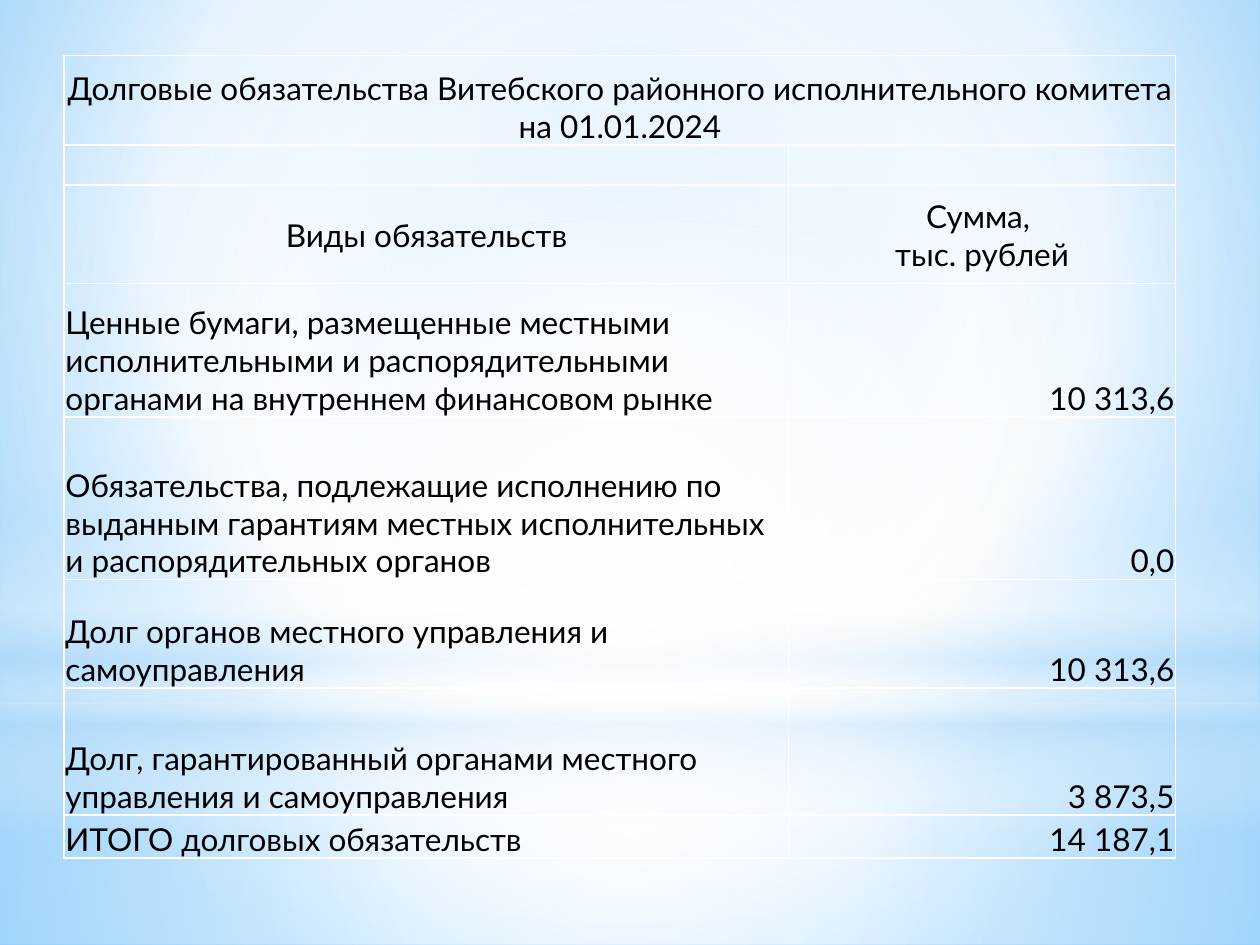
from lxml import etree
from pptx import Presentation, util as u
from pptx.dml.color import RGBColor
from pptx.enum import shapes, text
from pptx.oxml import parse_xml
from pptx.oxml.ns import nsdecls, qn

WIDTH, HEIGHT = 10, 7.5
COLORS = {"sky": "9ED5FF", "deep": "5BB9FF", "mist": "B4DCFA",
          "white": "FFFFFF", "text": "000000"}
CENTER = (50, 50, 50, 50)

# Stops are (position %, color, opacity %); the focus is left, top, right, bottom in %.
BACKGROUND = ([(0, "sky", 100), (60, "white", 100), (100, "deep", 100)], (20, 10, 20, 60))
# Shape, top, height, stops, focus (None for a vertical gradient)
LAYERS = [
    ("RECTANGLE", 5.58, 1.92, [(0, "white", 91), (37, "white", 76), (100, "mist", 79)], CENTER),
    ("RECTANGLE", 0, 5.58, [(0, "white", 89), (48, "white", 62), (100, "mist", 79)], CENTER),
    ("RECTANGLE", 4.12, 2.5, [(0, "white", 0), (29, "white", 30), (45, "mist", 40),
                              (55, "white", 26), (65, "mist", 60), (100, "white", 0)], None),
    ("OVAL", 1.75, 5.58, [(0, "white", 100), (56, "white", 0)], CENTER),
]

TITLE = "Долговые обязательства Витебского районного исполнительного комитета на 01.01.2024"
# Row height, left cell, right cell
ROWS = [
    (0.71, TITLE, ""),
    (0.32, "", ""),
    (0.78, "Виды обязательств", "Сумма, \vтыс. рублей"),
    (1.06, "Ценные бумаги, размещенные местными исполнительными и распорядительными "
           "органами на внутреннем финансовом рынке", "10 313,6"),
    (1.29, "Обязательства, подлежащие исполнению по выданным гарантиям местных "
           "исполнительных и распорядительных органов", "0,0"),
    (0.86, "Долг органов местного управления и самоуправления", "10 313,6"),
    (1.01, "Долг, гарантированный органами местного управления и самоуправления", "3 873,5"),
    (0.34, "ИТОГО долговых обязательств", "14 187,1"),
]
COLUMNS = (5.75, 3.07)
TABLE_LEFT, TABLE_TOP = 0.51, 0.44
HEADER_ROW = 2
MARGINS = {"margin_left": u.Inches(0.01), "margin_right": u.Inches(0.01),
           "margin_top": u.Inches(0.01), "margin_bottom": 0}
FONT = {"name": "Lato", "size": u.Pt(18)}


def paint_gradient(fill, element, stops, focus):
    """Give a fill inside element a gradient with its own stops and opacity."""
    fill.gradient()
    default = next(element.iter(qn("a:gradFill")))
    stop_xml = "".join(
        f'<a:gs pos="{position * 1000}"><a:srgbClr val="{COLORS[color]}">'
        f'<a:alpha val="{opacity * 1000}"/></a:srgbClr></a:gs>'
        for position, color, opacity in stops)
    if focus:
        sides = " ".join(f'{side}="{share * 1000}"' for side, share in zip("ltrb", focus))
        direction = f'<a:path path="circle"><a:fillToRect {sides}/></a:path>'
    else:
        direction = '<a:lin ang="5400000" scaled="0"/>'
    default.getparent().replace(default, parse_xml(
        f'<a:gradFill rotWithShape="1" {nsdecls("a")}>'
        f'<a:gsLst>{stop_xml}</a:gsLst>{direction}</a:gradFill>'))


def add_borders(cell):
    properties = cell._tc.get_or_add_tcPr()
    for index, side in enumerate("LRTB"):
        line = etree.Element(qn(f"a:ln{side}"), w=str(u.Pt(1)))
        solid = etree.SubElement(line, qn("a:solidFill"))
        etree.SubElement(solid, qn("a:srgbClr"), val=COLORS["white"])
        properties.insert(index, line)


def format_cell(cell, content, alignment, anchor):
    cell.fill.background()
    add_borders(cell)
    cell.vertical_anchor = anchor
    for name, value in MARGINS.items():
        setattr(cell, name, value)
    cell.text_frame.text = content
    paragraph = cell.text_frame.paragraphs[0]
    paragraph.alignment = alignment
    for run in paragraph.runs:
        for name, value in FONT.items():
            setattr(run.font, name, value)
        run.font.color.rgb = RGBColor.from_string(COLORS["text"])


def add_backdrop(slide):
    paint_gradient(slide.background.fill, slide.element, *BACKGROUND)
    for kind, top, height, stops, focus in LAYERS:
        shape = slide.shapes.add_shape(getattr(shapes.MSO_SHAPE, kind), 0, u.Inches(top),
                                       u.Inches(WIDTH), u.Inches(height))
        shape.shadow.inherit = False
        shape.line.fill.background()
        paint_gradient(shape.fill, shape.element, stops, focus)


def add_debt_table(slide):
    total_height = sum(row[0] for row in ROWS)
    table = slide.shapes.add_table(
        len(ROWS), len(COLUMNS), u.Inches(TABLE_LEFT), u.Inches(TABLE_TOP),
        u.Inches(sum(COLUMNS)), u.Inches(total_height)).table
    table.first_row = table.horz_banding = False
    for column, width in zip(table.columns, COLUMNS):
        column.width = u.Inches(width)
    align, anchors = text.PP_ALIGN, text.MSO_ANCHOR
    for index, (height, *contents) in enumerate(ROWS):
        table.rows[index].height = u.Inches(height)
        centered = index <= HEADER_ROW
        alignments = (align.CENTER,) * 2 if centered else (align.LEFT, align.RIGHT)
        anchor = anchors.MIDDLE if index == HEADER_ROW else anchors.BOTTOM
        for column, content in enumerate(contents):
            format_cell(table.cell(index, column), content, alignments[column], anchor)
    table.cell(0, 0).merge(table.cell(0, 1))


def main():
    presentation = Presentation()
    presentation.slide_width = u.Inches(WIDTH)
    presentation.slide_height = u.Inches(HEIGHT)
    slide = presentation.slides.add_slide(presentation.slide_layouts[6])
    add_backdrop(slide)
    add_debt_table(slide)
    presentation.save("out.pptx")


if __name__ == "__main__":
    main()
